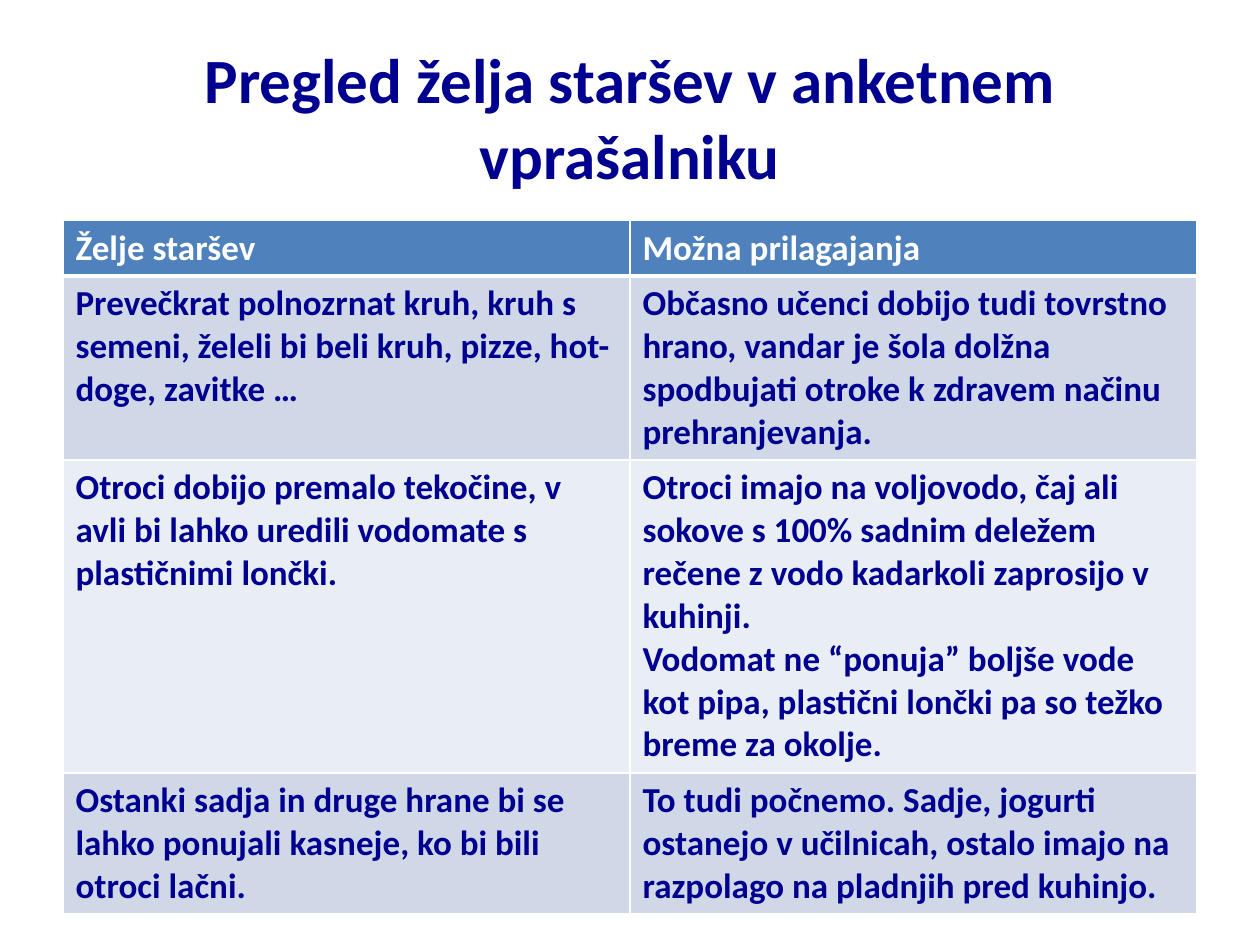
from lxml import etree
from pptx import Presentation
from pptx.dml.color import RGBColor
from pptx.enum import text
from pptx.oxml import ns
from pptx.util import Inches, Pt

NAVY, WHITE, HEADER = "000090", "FFFFFF", "4F81BD"
BANDS = ["D0D8E8", "E9EDF4"]
TITLE = "Pregled želja staršev v anketnem vprašalniku"
# Each cell is a list of paragraphs
ROWS = [
    (["Želje staršev"], ["Možna prilagajanja"]),
    (["Prevečkrat polnozrnat kruh, kruh s semeni, želeli bi beli kruh, pizze, "
      "hot-doge, zavitke …"],
     ["Občasno učenci dobijo tudi tovrstno hrano, vandar je šola dolžna "
      "spodbujati otroke k zdravem načinu prehranjevanja."]),
    (["Otroci dobijo premalo tekočine, v avli bi lahko uredili vodomate s "
      "plastičnimi lončki."],
     ["Otroci imajo na voljovodo, čaj ali sokove s 100% sadnim deležem "
      "rečene z vodo kadarkoli zaprosijo v kuhinji.",
      "Vodomat ne “ponuja” boljše vode kot pipa, plastični lončki pa so težko "
      "breme za okolje."]),
    (["Ostanki sadja in druge hrane bi se lahko ponujali kasneje, ko bi bili "
      "otroci lačni."],
     ["To tudi počnemo. Sadje, jogurti ostanejo v učilnicah, ostalo imajo na "
      "razpolago na pladnjih pred kuhinjo."]),
]
LEFT, WIDTH = 0.5, 9
TABLE_TOP, ROW_HEIGHT = 1.75, 0.41


def rgb(value):
    return RGBColor.from_string(value)


def write(frame, paragraphs, size=20, color=NAVY, align=text.PP_ALIGN.LEFT):
    for index, wording in enumerate(paragraphs):
        paragraph = frame.add_paragraph() if index else frame.paragraphs[0]
        paragraph.alignment = align
        run = paragraph.add_run()
        run.text = wording
        run.font.name = "Calibri"
        run.font.size = Pt(size)
        run.font.bold = True
        run.font.color.rgb = rgb(color)


def set_borders(cell, top, bottom):
    """Draw white cell borders; widths in points, 1 at the sides."""
    properties = cell._tc.get_or_add_tcPr()
    sides = [("a:lnL", 1), ("a:lnR", 1), ("a:lnT", top), ("a:lnB", bottom)]
    for position, (tag, width) in enumerate(sides):
        line = etree.Element(ns.qn(tag), w=str(Pt(width)))
        fill = etree.SubElement(line, ns.qn("a:solidFill"))
        etree.SubElement(fill, ns.qn("a:srgbClr"), val=WHITE)
        properties.insert(position, line)


def main():
    deck = Presentation()
    deck.slide_width, deck.slide_height = Inches(10), Inches(7.5)
    slide = deck.slides.add_slide(deck.slide_layouts[5])

    title = slide.shapes.title
    title.left, title.top = Inches(LEFT), Inches(0.3)
    title.width, title.height = Inches(WIDTH), Inches(1.25)
    title.text_frame.vertical_anchor = text.MSO_ANCHOR.MIDDLE
    write(title.text_frame, [TITLE], size=36, align=text.PP_ALIGN.CENTER)

    table = slide.shapes.add_table(
        len(ROWS), len(ROWS[0]), Inches(LEFT), Inches(TABLE_TOP),
        Inches(WIDTH), Inches(ROW_HEIGHT * len(ROWS))).table
    for r, row in enumerate(ROWS):
        table.rows[r].height = Inches(ROW_HEIGHT)
        for c, paragraphs in enumerate(row):
            cell = table.cell(r, c)
            cell.fill.solid()
            cell.fill.fore_color.rgb = rgb(BANDS[(r - 1) % 2] if r else HEADER)
            set_borders(cell, top=3 if r == 1 else 1, bottom=1 if r else 3)
            write(cell.text_frame, paragraphs, color=NAVY if r else WHITE)

    deck.save("out.pptx")


if __name__ == "__main__":
    main()
